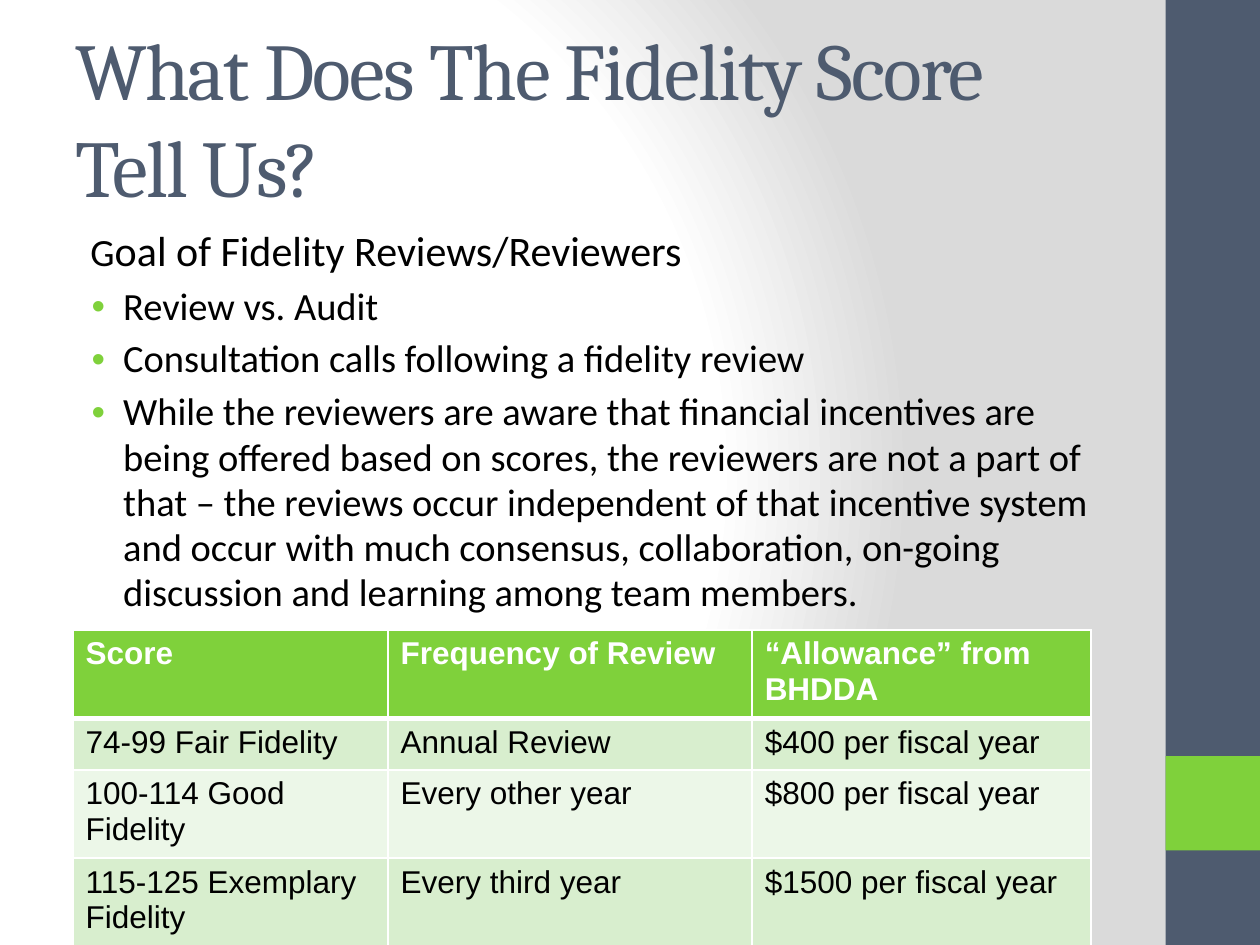
import pptx
import pptx.dml.color
import pptx.enum.shapes
import pptx.enum.text
import pptx.oxml
import pptx.oxml.ns
import pptx.util
from pptx.util import Inches

COLORS = {
    "slate": "4E5B6F", "green": "7FD13B", "white": "FFFFFF", "gray": "DADADA",
    "black": "000000", "band": "D8EECE", "light_band": "ECF7E8",
}
NS = pptx.oxml.ns.nsdecls("a")


def rgb(name):
    return pptx.dml.color.RGBColor.from_string(COLORS[name])


def add_run(paragraph, text, font, size, color, bold=False):
    run = paragraph.add_run()
    run.text = text
    run.font.name = font
    run.font.size = pptx.util.Pt(size)
    run.font.bold = bold
    run.font.color.rgb = rgb(color)
    return run


prs = pptx.Presentation()
prs.slide_width, prs.slide_height = Inches(10), Inches(7.5)
slide = prs.slides.add_slide(prs.slide_layouts[6])

# Background: white glow on the left, fading to gray
background = slide.background.fill
background.gradient()
gradient = background._fill._gradFill
for child in list(gradient):
    gradient.remove(child)
stops = "".join(
    f'<a:gs pos="{percent * 1000}"><a:srgbClr val="{COLORS[color]}"/></a:gs>'
    for percent, color in [(0, "white"), (75, "white"), (100, "gray")])
gradient.append(pptx.oxml.parse_xml(f"<a:gsLst {NS}>{stops}</a:gsLst>"))
gradient.append(pptx.oxml.parse_xml(
    f'<a:path {NS} path="circle">'
    '<a:fillToRect l="20000" t="50000" r="100000" b="50000"/></a:path>'))

# Side band with its accent square
for top, height, color in [(0, 7.5, "slate"), (6, 0.75, "green")]:
    band = slide.shapes.add_shape(
        pptx.enum.shapes.MSO_SHAPE.RECTANGLE,
        Inches(9.25), Inches(top), Inches(0.75), Inches(height))
    band.shadow.inherit = False
    band.fill.solid()
    band.fill.fore_color.rgb = rgb(color)
    band.line.fill.background()

# Title
title = slide.shapes.add_textbox(
    Inches(0.5), Inches(0.3), Inches(8.33), Inches(1.25)).text_frame
title.word_wrap = True
title.vertical_anchor = pptx.enum.text.MSO_ANCHOR.MIDDLE
heading = add_run(title.paragraphs[0], "What Does The Fidelity Score Tell Us?",
                  "Cambria", 46, "slate")
heading.font._element.set("spc", "-100")

# Goal and its bullets
goal = slide.shapes.add_textbox(
    Inches(0.5), Inches(1.75), Inches(8.33), Inches(5.25)).text_frame
goal.word_wrap = True
goal_lines = [
    [("G", 22), ("oal of Fidelity Reviews/Reviewers", 24)],
    [("Review vs. Audit", 22)],
    [("Consultation calls following a fidelity review", 22)],
    [("While the reviewers are aware that financial incentives are being "
      "offered based on scores, the reviewers are not a part of that – the "
      "reviews occur independent of that incentive system and occur with much "
      "consensus, collaboration, on-going discussion and learning among team "
      "members.", 22)],
]
for index, pieces in enumerate(goal_lines):
    line = goal.add_paragraph() if index else goal.paragraphs[0]
    line.space_before = pptx.util.Pt(4.4)
    line.line_spacing = 0.98
    properties = line._p.get_or_add_pPr()
    properties.set("marL", str(Inches(0.38 if index else 0.12)))
    properties.set("indent", str(Inches(-0.25 if index else 0)))
    if index:
        properties.append(pptx.oxml.parse_xml(
            f'<a:buClr {NS}><a:srgbClr val="{COLORS["green"]}"/></a:buClr>'))
        properties.append(pptx.oxml.parse_xml(
            f'<a:buFont {NS} typeface="Arial"/>'))
        properties.append(pptx.oxml.parse_xml(f'<a:buChar {NS} char="•"/>'))
    for text, size in pieces:
        add_run(line, text, "Calibri", size, "black")

# Score table
score_rows = [
    ("Score", "Frequency of Review", "“Allowance” from BHDDA"),
    ("74-99 Fair Fidelity", "Annual Review", "$400 per fiscal year"),
    ("100-114 Good Fidelity", "Every other year", "$800 per fiscal year"),
    ("115-125 Exemplary Fidelity", "Every third year", "$1500 per fiscal year"),
]
row_fills = ["green", "band", "light_band", "band"]
scores = slide.shapes.add_table(
    4, 3, Inches(0.58), Inches(5), Inches(8.08), Inches(1.64)).table
for column, width in zip(scores.columns, [2.5, 2.89, 2.69]):
    column.width = Inches(width)
for r, texts in enumerate(score_rows):
    scores.rows[r].height = Inches(0.41)
    for c, text in enumerate(texts):
        cell = scores.cell(r, c)
        cell.fill.solid()
        cell.fill.fore_color.rgb = rgb(row_fills[r])
        add_run(cell.text_frame.paragraphs[0], text, "Arial", 18,
                "black" if r else "white", bold=r == 0)
        for position, side in enumerate("LRTB"):
            under_header = (r, side) in [(0, "B"), (1, "T")]
            width = pptx.util.Pt(3 if under_header else 1)
            cell._tc.get_or_add_tcPr().insert(position, pptx.oxml.parse_xml(
                f'<a:ln{side} {NS} w="{width}"><a:solidFill>'
                f'<a:srgbClr val="{COLORS["white"]}"/></a:solidFill></a:ln{side}>'))

prs.save("out.pptx")
